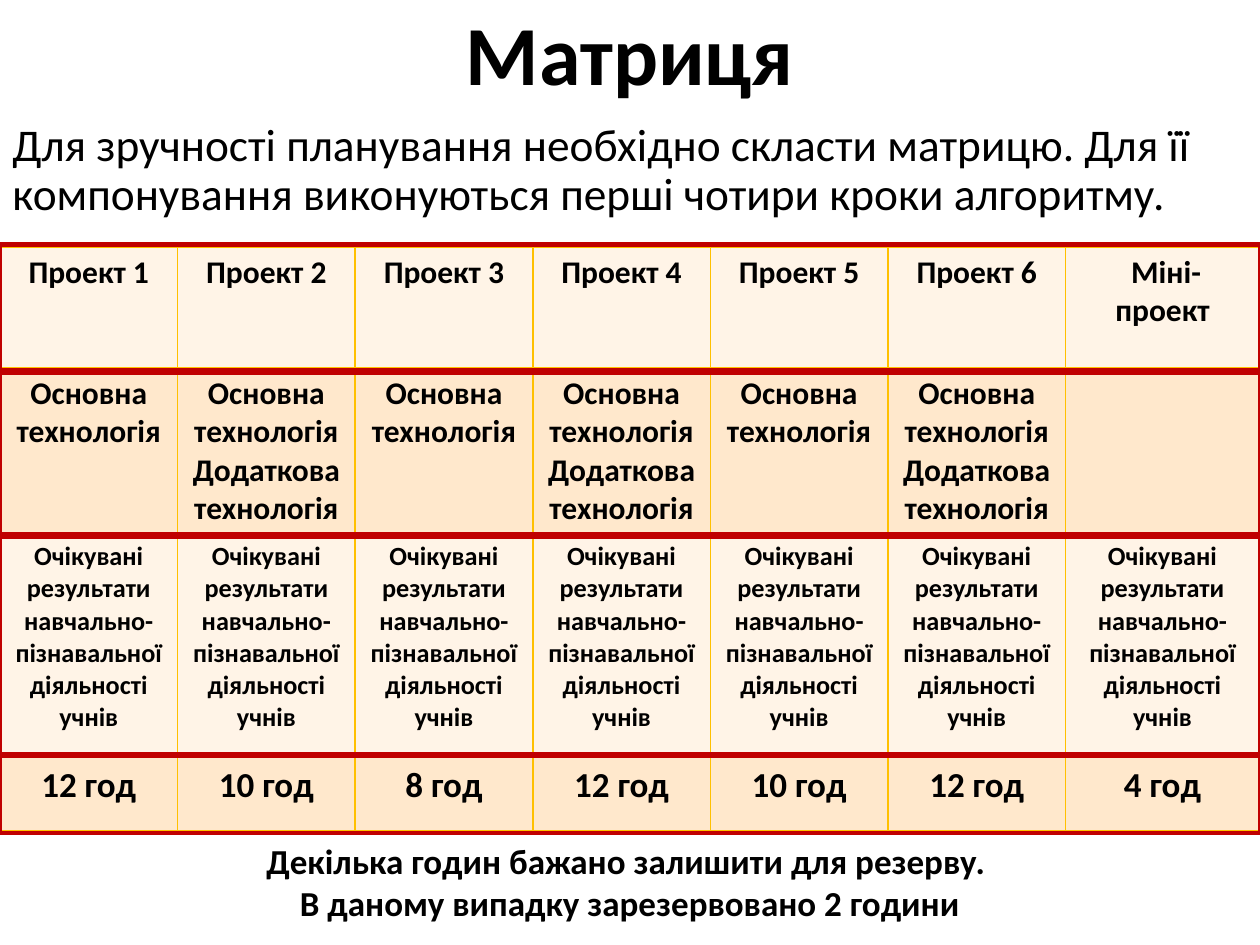
from dataclasses import dataclass

from lxml.etree import SubElement
from pptx import Presentation
from pptx.dml.color import RGBColor
from pptx.enum.shapes import MSO_SHAPE
from pptx.enum.text import MSO_ANCHOR, PP_ALIGN
from pptx.oxml.ns import qn
from pptx.util import Cm, Pt


@dataclass(frozen=True)
class Theme:
    font: str = "Calibri"
    text: str = "000000"
    light: str = "FFF4E7"
    dark: str = "FFE8CC"
    grid: str = "FFC000"
    frame: str = "C00000"
    title_pt: float = 48
    body_pt: float = 25.9
    note_pt: float = 20
    frame_pt: float = 2.5
    grid_pt: float = 1


@dataclass(frozen=True)
class Box:
    left: float
    top: float
    width: float
    height: float

    def lengths(self) -> tuple:
        return Cm(self.left), Cm(self.top), Cm(self.width), Cm(self.height)


@dataclass(frozen=True)
class Row:
    height: float
    size: float
    fill: str
    texts: list[str]
    top: str = Theme.grid
    bottom: str = Theme.grid


@dataclass(frozen=True)
class Label:
    box: Box
    text: str
    size: float
    bold: bool = True
    align: PP_ALIGN = PP_ALIGN.CENTER
    anchor: MSO_ANCHOR = MSO_ANCHOR.TOP
    spacing: float = 1.0


THEME = Theme()
WIDTH, HEIGHT = 25.4, 19.05
COLUMNS = [3.58] * 6 + [3.91]
MAIN = "Основна технологія"
BOTH = MAIN + "\nДодаткова технологія"
RESULT = "Очікувані результати навчально-пізнавальної діяльності учнів"
ROWS = [
    Row(2.44, 18, THEME.light, [f"Проект {n}" for n in range(1, 7)] + [" Міні-проект"]),
    Row(3.33, 18, THEME.dark, [MAIN, BOTH] * 3 + [""]),
    Row(4.5, 15, THEME.light, [RESULT] * 7, bottom=THEME.text),
    Row(1.47, 20, THEME.dark, [f"{h} год" for h in (12, 10, 8, 12, 10, 12, 4)], top=THEME.text),
]
FRAMES = [
    Box(0, top, WIDTH, height)
    for top, height in ((4.93, 2.54), (7.52, 3.25), (10.82, 4.39), (15.24, 1.55))
]
LABELS = [
    Label(Box(1.75, 0, 21.9, 2.34), "Матриця", THEME.title_pt,
          anchor=MSO_ANCHOR.MIDDLE, spacing=0.9),
    Label(Box(0, 2.34, WIDTH, 2.82),
          "Для зручності планування необхідно скласти матрицю. "
          "Для її компонування виконуються перші чотири кроки алгоритму.",
          THEME.body_pt, bold=False, align=PP_ALIGN.LEFT, spacing=0.9),
    Label(Box(0, 16.79, WIDTH, 1.96),
          "Декілька годин бажано залишити для резерву. \n"
          "В даному випадку зарезервовано 2 години", THEME.note_pt),
]


def write(tf, text: str, size: float, bold: bool = True,
          align: PP_ALIGN = PP_ALIGN.CENTER, spacing: float | None = None) -> None:
    tf.text = text
    for p in tf.paragraphs:
        p.alignment = align
        p.line_spacing = spacing
        for r in p.runs:
            r.font.name = THEME.font
            r.font.size = Pt(size)
            r.font.bold = bold
            r.font.color.rgb = RGBColor.from_string(THEME.text)


def set_borders(cell, row: Row) -> None:
    tc_pr = cell._tc.get_or_add_tcPr()
    sides = {"L": THEME.grid, "R": THEME.grid, "T": row.top, "B": row.bottom}
    for side, color in sides.items():
        ln = SubElement(tc_pr, qn(f"a:ln{side}"), w=str(Pt(THEME.grid_pt)))
        SubElement(SubElement(ln, qn("a:solidFill")), qn("a:srgbClr"), val=color)


def draw_table(s, left: float, top: float, rows: list[Row]) -> None:
    box = Box(left, top, sum(COLUMNS), sum(row.height for row in rows))
    table = s.shapes.add_table(len(rows), len(COLUMNS), *box.lengths()).table
    table.first_row = table.horz_banding = False
    for column, width in zip(table.columns, COLUMNS):
        column.width = Cm(width)
    for table_row, row in zip(table.rows, rows):
        table_row.height = Cm(row.height)
        for cell, text in zip(table_row.cells, row.texts):
            set_borders(cell, row)
            cell.fill.solid()
            cell.fill.fore_color.rgb = RGBColor.from_string(row.fill)
            write(cell.text_frame, text, row.size)


def draw_frame(s, box: Box) -> None:
    sp = s.shapes.add_shape(MSO_SHAPE.RECTANGLE, *box.lengths())
    sp.shadow.inherit = False
    sp.fill.background()
    sp.line.color.rgb = RGBColor.from_string(THEME.frame)
    sp.line.width = Pt(THEME.frame_pt)


def draw_label(s, label: Label) -> None:
    tf = s.shapes.add_textbox(*label.box.lengths()).text_frame
    tf.word_wrap = True
    tf.vertical_anchor = label.anchor
    write(tf, label.text, label.size, label.bold, label.align, label.spacing)


def main() -> None:
    """Build the project planning matrix slide."""
    prs = Presentation()
    prs.slide_width, prs.slide_height = Cm(WIDTH), Cm(HEIGHT)
    s = prs.slides.add_slide(prs.slide_layouts[6])
    draw_table(s, 0, 4.98, ROWS)
    for box in FRAMES:
        draw_frame(s, box)
    for label in LABELS:
        draw_label(s, label)
    prs.save("out.pptx")


if __name__ == "__main__":
    main()
